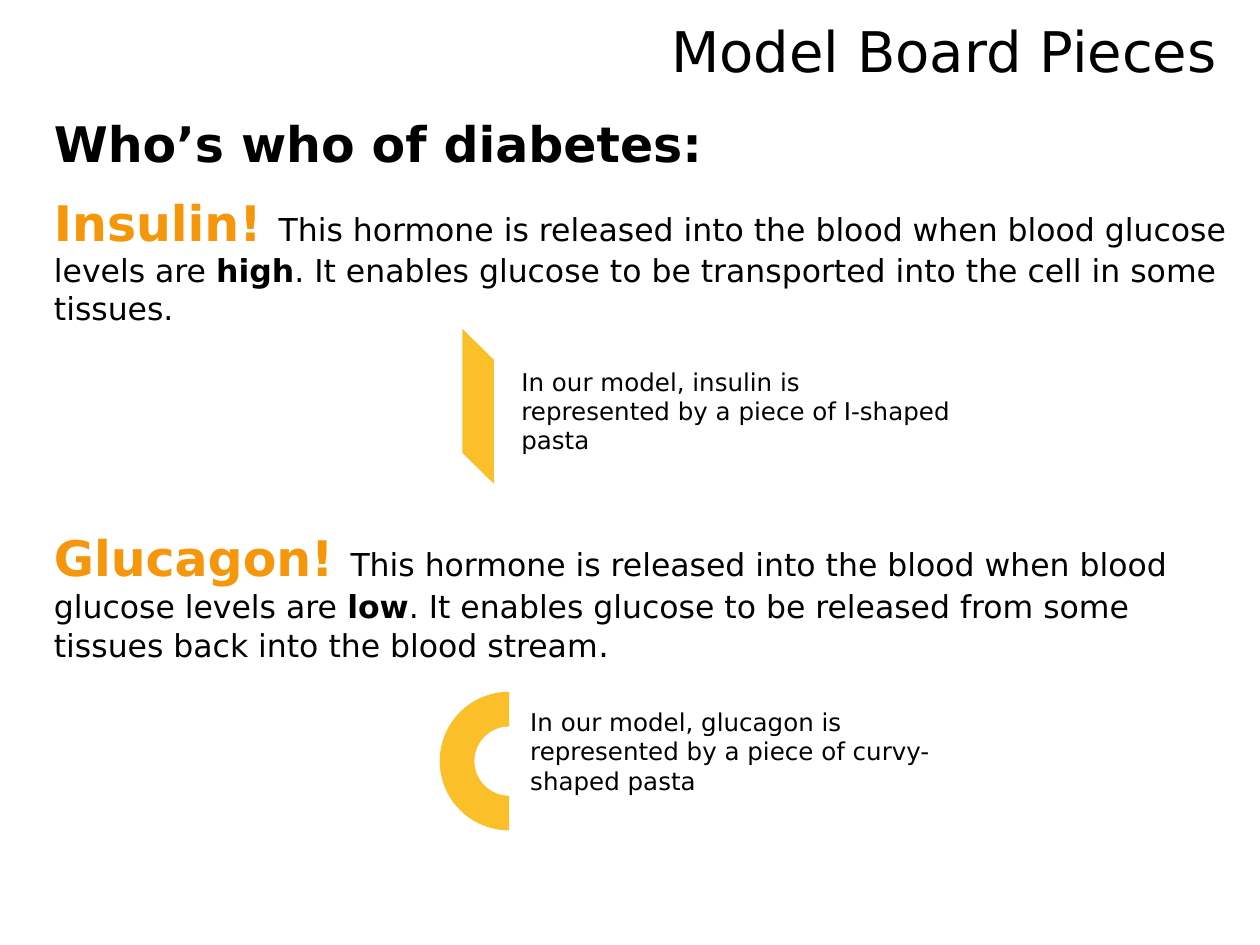
"""Build the slide that introduces the insulin and glucagon model pieces."""
from pptx import Presentation
from pptx import util as u
from pptx.dml.color import RGBColor
from pptx.enum import shapes, text

BLACK = RGBColor(0x00, 0x00, 0x00)
ORANGE = RGBColor(0xF6, 0x96, 0x0A)
PASTA = RGBColor(0xFB, 0xBF, 0x29)


class Board:
    def __init__(self, slide, font="DejaVu Sans"):
        self.slide = slide
        self.font = font

    def add_words(self, box, paragraphs, align=text.PP_ALIGN.LEFT, gap=0):
        frame = self.slide.shapes.add_textbox(*map(u.Inches, box)).text_frame
        frame.word_wrap = True
        for index, pieces in enumerate(paragraphs):
            paragraph = frame.add_paragraph() if index else frame.paragraphs[0]
            paragraph.alignment = align
            if index:
                paragraph.space_before = u.Pt(gap)
            for words, size, bold, colour in pieces:
                run = paragraph.add_run()
                run.text = words
                run.font.name = self.font
                run.font.size = u.Pt(size)
                run.font.bold = bold
                run.font.color.rgb = colour

    def add_caption(self, box, words):
        self.add_words(box, [[(words, 14, False, BLACK)]])

    def add_pasta(self, preset, box):
        piece = self.slide.shapes.add_shape(preset, *map(u.Inches, box))
        piece.rotation = 270
        piece.shadow.inherit = False
        piece.fill.solid()
        piece.fill.fore_color.rgb = PASTA
        piece.line.fill.background()


def hormone(name, level, effect):
    release = "This hormone is released into the blood when blood glucose levels are "
    return [
        (f"{name}! ", 28, True, ORANGE),
        (release, 18, False, BLACK),
        (level, 18, True, BLACK),
        (f". It enables glucose to be {effect}", 18, False, BLACK),
    ]


def main():
    deck = Presentation()
    deck.slide_width, deck.slide_height = u.Inches(10), u.Inches(7.5)
    board = Board(deck.slides.add_slide(deck.slide_layouts[6]))

    heading = [("Who’s who of diabetes:", 28, True, BLACK)]
    insulin = hormone("Insulin", "high", "transported into the cell in some tissues.")
    glucagon = hormone("Glucagon", "low", "released from some tissues back into the blood stream")
    full_stop = (".", 19, False, BLACK)

    board.add_words((0.33, 0.85, 9.81, 3.11), [heading, insulin], gap=11.6)
    board.add_caption((4.04, 2.86, 3.63, 0.81),
                      "In our model, insulin is represented by a piece of I-shaped pasta")
    board.add_words((0.33, 4.14, 9.47, 1.21), [glucagon + [full_stop]])
    board.add_pasta(shapes.MSO_SHAPE.BLOCK_ARC, (3.49, 5.49, 1.1, 1.1))
    board.add_caption((4.11, 5.56, 3.91, 0.81),
                      "In our model, glucagon is represented by a piece of curvy-shaped pasta")
    board.add_pasta(shapes.MSO_SHAPE.FLOWCHART_DATA, (3.18, 3.1, 1.23, 0.25))
    board.add_words((4.11, 0.08, 5.65, 0.65), [[("Model Board Pieces", 32, False, BLACK)]],
                    align=text.PP_ALIGN.RIGHT)

    deck.save("out.pptx")


if __name__ == "__main__":
    main()
